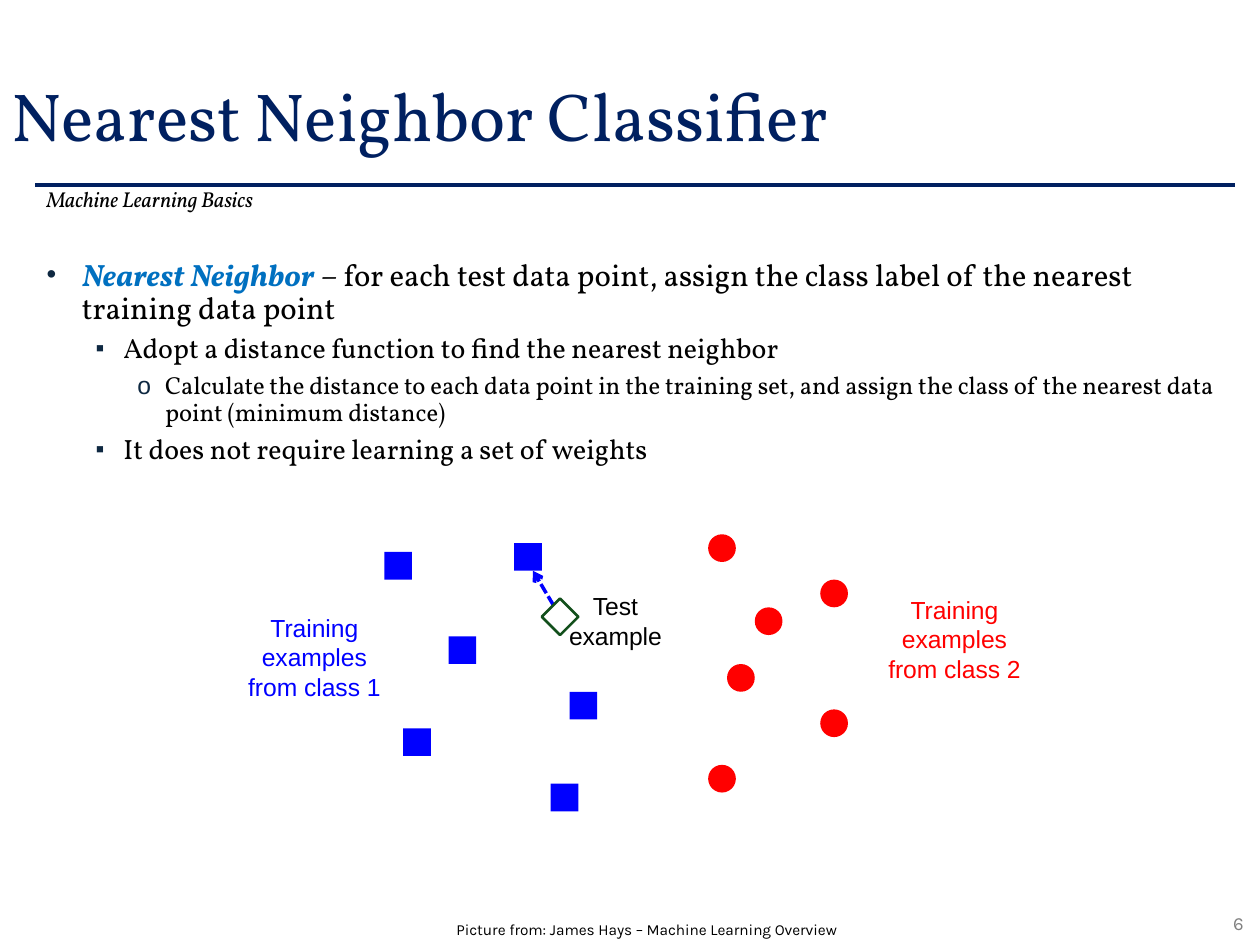
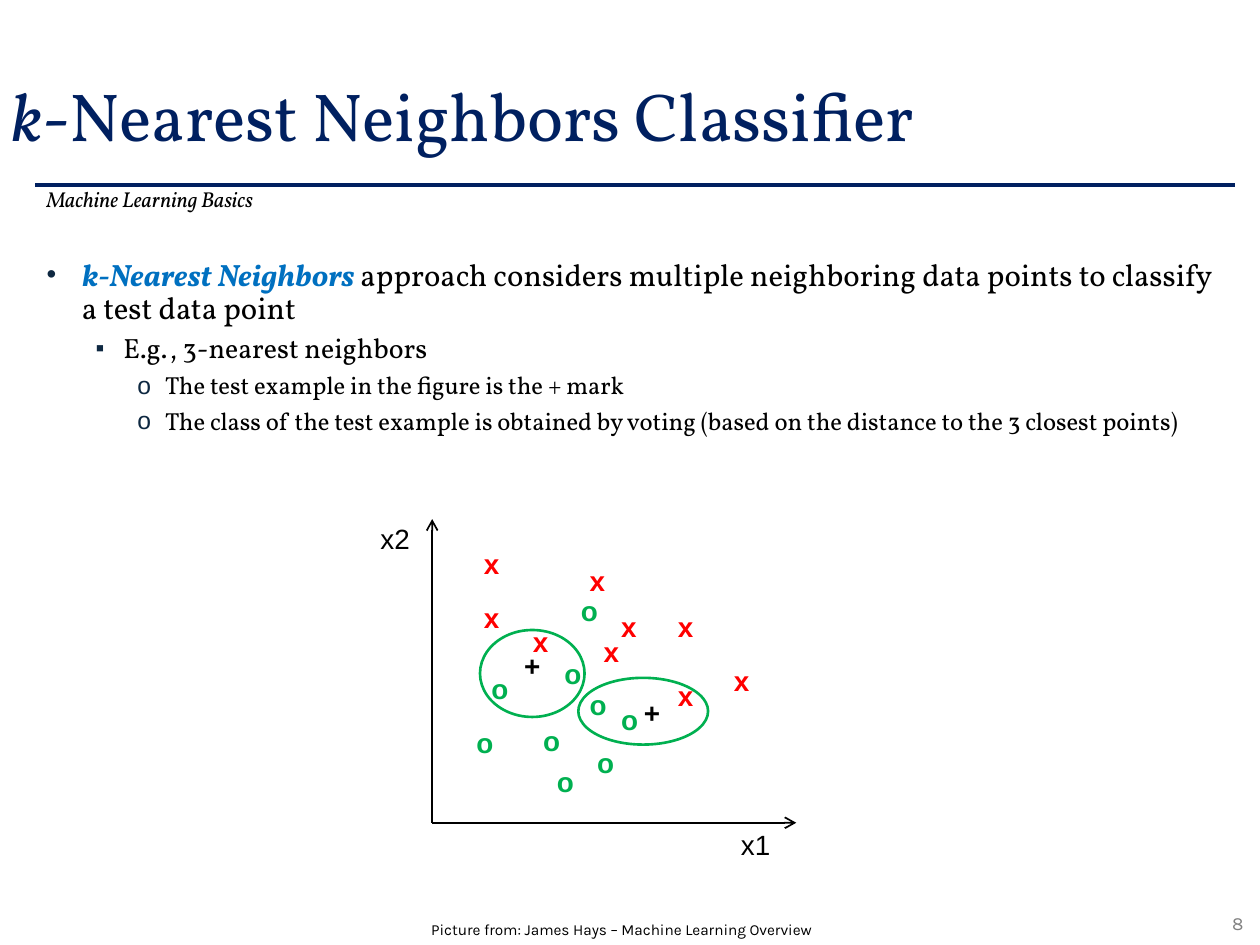
from dataclasses import dataclass, field

from lxml import etree
from pptx import Presentation
from pptx import util as u
from pptx.dml.color import RGBColor
from pptx.enum import dml, shapes, text
from pptx.oxml.ns import qn

# The grid has 100 columns and 75 rows.
COLUMNS, ROWS = 100, 75
WIDTH, HEIGHT = u.Inches(10), u.Inches(7.5)

COLORS = {
    "navy": "002060", "bullet": "0E2841", "term": "0070C0", "black": "000000",
    "gray": "808080", "white": "FFFFFF", "blue": "0000FF", "red": "FF0000",
    "green": "00B050", "dark green": "124F1B",
}
FRAME = {"margin_left": u.Inches(0.09), "margin_right": u.Inches(0.09),
         "margin_top": u.Inches(0.04), "margin_bottom": u.Inches(0.04)}
CENTER, RIGHT = text.PP_ALIGN.CENTER, text.PP_ALIGN.RIGHT


@dataclass(frozen=True)
class Style:
    size: float
    font: str = "Arial"
    color: str = "black"
    bold: bool = False
    italic: bool = False


@dataclass(frozen=True)
class Box:
    """A place on the grid, in columns and rows."""
    column: float
    row: float
    columns: float
    rows: float


@dataclass(frozen=True)
class Level:
    size: float
    bullet: str
    margin: float
    hanging: float
    before: float
    bullet_percent: int


@dataclass(frozen=True)
class Bullet:
    level: int
    wording: str
    term: str = ""


@dataclass(frozen=True)
class Page:
    number: str
    title: str
    credit_column: float
    bullets: list[Bullet]
    title_variable: str = ""


@dataclass(frozen=True)
class PointClass:
    """Data points of one class, each given as (column, row)."""
    mark: object
    color: str
    points: list[tuple[float, float]] = field(default_factory=list)


TITLE = Style(38.8, "Vollkorn", "navy")
TITLE_VARIABLE = Style(38.8, "Vollkorn", "navy", italic=True)
SUBTITLE = Style(12.3, "Vollkorn", italic=True)
NUMBER = Style(10.6, "Karla", "gray")
CREDIT = Style(8.8, "Karla")
AXIS_LABEL = Style(15.9)

LEVELS = [
    Level(17.6, "•", 0.28, 0.28, 10, 90),
    Level(15.9, "▪", 0.61, 0.22, 5, 90),
    Level(14.1, "o", 0.94, 0.22, 5, 100),
]

NEAREST = Page("6", "Nearest Neighbor Classifier", 18, [
    Bullet(0, "– for each test data point, assign the class label of the nearest "
              "training data point", "Nearest Neighbor "),
    Bullet(1, "Adopt a distance function to find the nearest neighbor"),
    Bullet(2, "Calculate the distance to each data point in the training set, and "
              "assign the class of the nearest data point (minimum distance)"),
    Bullet(1, "It does not require learning a set of weights"),
])
K_NEAREST = Page("8", "-Nearest Neighbors Classifier", 16, [
    Bullet(0, "approach considers multiple neighboring data points to classify "
              "a test data point", "k-Nearest Neighbors "),
    Bullet(1, "E.g., 3-nearest neighbors"),
    Bullet(2, "The test example in the figure is the + mark"),
    Bullet(2, "The class of the test example is obtained by voting (based on the "
              "distance to the 3 closest points)"),
], title_variable="k")

TRAINING_CLASSES = [
    PointClass(shapes.MSO_SHAPE.RECTANGLE, "blue", [
        (30.5, 43.8), (35.6, 50.5), (40.8, 43.1),
        (32, 57.8), (45.2, 54.9), (43.7, 62.2)]),
    PointClass(shapes.MSO_SHAPE.OVAL, "red", [
        (65.1, 46), (57.7, 52.7), (65.1, 56.3),
        (56.2, 42.4), (59.9, 48.2), (56.2, 60.7)]),
]
PLOT_CLASSES = [
    PointClass("x", "red", [
        (48.4, 48), (52.9, 48), (52.9, 53.5), (57.35, 52.3), (37.5, 43),
        (37.5, 47.3), (45.9, 44.3), (41.4, 49.2), (47, 50)]),
    PointClass("o", "green", [
        (45.2, 46.7), (48.4, 55.4), (36.9, 57.2), (38.1, 52.9), (43.3, 60.3),
        (45.9, 54.2), (43.9, 51.7), (42.2, 57), (46.5, 58.8)]),
    PointClass("+", "black", [(40.7, 51.1), (50.2, 54.8)]),
]
NEIGHBORHOODS = [Box(38.1, 50, 8.3, 6.9), Box(45.9, 53.8, 10.3, 5.3)]


def x(columns: float) -> int:
    return round(WIDTH * columns / COLUMNS)


def y(rows: float) -> int:
    return round(HEIGHT * rows / ROWS)


def place(box: Box) -> tuple[int, int, int, int]:
    return x(box.column), y(box.row), x(box.columns), y(box.rows)


def rgb(color: str) -> RGBColor:
    return RGBColor.from_string(COLORS[color])


def set_all(target, values: dict) -> None:
    for name, value in values.items():
        setattr(target, name, value)


def add_run(paragraph, wording: str, style: Style) -> None:
    run = paragraph.add_run()
    run.text = wording
    set_all(run.font, {"name": style.font, "size": u.Pt(style.size),
                       "bold": style.bold, "italic": style.italic})
    run.font.color.rgb = rgb(style.color)


def add_frame(slide, box: Box, wrap: bool = True):
    """Add an empty text box and return its text frame."""
    frame = slide.shapes.add_textbox(*place(box)).text_frame
    set_all(frame, FRAME | {"word_wrap": wrap})
    return frame


def add_label(slide, box: Box, wording: str, style: Style, wrap: bool = True,
              **paragraph_format) -> None:
    paragraph = add_frame(slide, box, wrap).paragraphs[0]
    set_all(paragraph, paragraph_format)
    add_run(paragraph, wording, style)


def add_line(slide, start: tuple[float, float], end: tuple[float, float],
             color: str, width: float, arrow: bool = False, dash=None) -> None:
    connector = slide.shapes.add_connector(
        shapes.MSO_CONNECTOR.STRAIGHT, x(start[0]), y(start[1]), x(end[0]), y(end[1]))
    connector.line.color.rgb = rgb(color)
    set_all(connector.line, {"width": u.Pt(width), "dash_style": dash})
    properties = connector.line._get_or_add_ln()
    if arrow:
        etree.SubElement(properties, qn("a:tailEnd"), type="arrow")
    etree.SubElement(properties.getparent(), qn("a:effectLst"))


def add_figure(slide, kind, box: Box, fill: str = "", line: str = "") -> None:
    """Add a preset shape; an empty colour name means no fill or no line."""
    shape = slide.shapes.add_shape(kind, *place(box))
    shape.shadow.inherit = False
    if fill:
        shape.fill.solid()
        shape.fill.fore_color.rgb = rgb(fill)
    else:
        shape.fill.background()
    if line:
        shape.line.color.rgb = rgb(line)
        shape.line.width = u.Pt(1.5)
    else:
        shape.line.fill.background()


def set_bullet(paragraph, level: Level) -> None:
    properties = paragraph._p.get_or_add_pPr()
    properties.set("marL", str(u.Inches(level.margin)))
    properties.set("indent", str(-u.Inches(level.hanging)))
    color = etree.SubElement(properties, qn("a:buClr"))
    etree.SubElement(color, qn("a:srgbClr"), val=COLORS["bullet"])
    etree.SubElement(properties, qn("a:buSzPct"), val=str(level.bullet_percent * 1000))
    etree.SubElement(properties, qn("a:buFont"), typeface="Arial")
    etree.SubElement(properties, qn("a:buChar"), char=level.bullet)


def add_bullets(slide, bullets: list[Bullet]) -> None:
    frame = add_frame(slide, Box(2.8, 20.2, 95.3, 51.8))
    for index, bullet in enumerate(bullets):
        paragraph = frame.add_paragraph() if index else frame.paragraphs[0]
        level = LEVELS[bullet.level]
        set_all(paragraph, {"level": bullet.level, "line_spacing": 0.9,
                            "space_before": u.Pt(level.before)})
        set_bullet(paragraph, level)
        if bullet.term:
            add_run(paragraph, bullet.term,
                    Style(level.size, "Vollkorn", "term", bold=True, italic=True))
        add_run(paragraph, bullet.wording, Style(level.size, "Vollkorn"))


def add_page(presentation, page: Page):
    """Add a slide with the number, rule, title, subtitle, bullets and credit."""
    slide = presentation.slides.add_slide(presentation.slide_layouts[6])
    slide.background.fill.solid()
    slide.background.fill.fore_color.rgb = rgb("white")
    add_label(slide, Box(88.6, 72, 11, 2.8), page.number, NUMBER, alignment=RIGHT)
    add_line(slide, (2.8, 14.7), (98, 14.7), "navy", 2)

    title = add_frame(slide, Box(0, 4.4, 100, 10.1))
    title.vertical_anchor = text.MSO_ANCHOR.MIDDLE
    title.paragraphs[0].line_spacing = 0.9
    if page.title_variable:
        add_run(title.paragraphs[0], page.title_variable, TITLE_VARIABLE)
    add_run(title.paragraphs[0], page.title, TITLE)

    add_bullets(slide, page.bullets)
    add_label(slide, Box(2.8, 14.6, 61.6, 3.4), "Machine Learning Basics", SUBTITLE,
              line_spacing=0.9, space_before=u.Pt(10))
    add_label(slide, Box(page.credit_column, 72.6, 66.7, 2.5),
              "Picture from: James Hays – Machine Learning Overview", CREDIT,
              alignment=CENTER)
    return slide


def draw_training_examples(slide) -> None:
    for group in TRAINING_CLASSES:
        for column, row in group.points:
            add_figure(slide, group.mark, Box(column, row, 2.2, 2.2), fill=group.color)
    for box, wording, color in [
        (Box(43.7, 46.5, 10.3, 5.8), "Test example", "black"),
        (Box(18.7, 48.2, 12.5, 10.5), "Training examples from class 1", "blue"),
        (Box(69.5, 46.8, 12.5, 10.5), "Training examples from class 2", "red"),
    ]:
        add_label(slide, box, wording, Style(14.1, color=color), alignment=CENTER)
    add_line(slide, (44.5, 49), (42.3, 45.3), "blue", 2, arrow=True,
             dash=dml.MSO_LINE.SQUARE_DOT)
    add_figure(slide, shapes.MSO_SHAPE.DIAMOND, Box(43, 47.5, 2.9, 2.9),
               fill="white", line="dark green")


def draw_neighbor_plot(slide) -> None:
    origin = (34.3, 65.3)
    for axis_end in [(34.3, 41.2), (63.2, 65.3)]:
        add_line(slide, origin, axis_end, "black", 1, arrow=True)
    for wording, column, row in [("x2", 29.3, 41), ("x1", 57.9, 65.3)]:
        add_label(slide, Box(column, row, 4.4, 3.7), wording, AXIS_LABEL, wrap=False)
    for group in PLOT_CLASSES:
        style = Style(15.9, color=group.color, bold=True)
        for column, row in group.points:
            add_label(slide, Box(column, row, 3.3, 3.7), group.mark, style, wrap=False)
    for neighborhood in NEIGHBORHOODS:
        add_figure(slide, shapes.MSO_SHAPE.OVAL, neighborhood, line="green")


def main() -> None:
    presentation = Presentation()
    set_all(presentation, {"slide_width": WIDTH, "slide_height": HEIGHT})
    draw_training_examples(add_page(presentation, NEAREST))
    draw_neighbor_plot(add_page(presentation, K_NEAREST))
    presentation.save("out.pptx")


if __name__ == "__main__":
    main()
